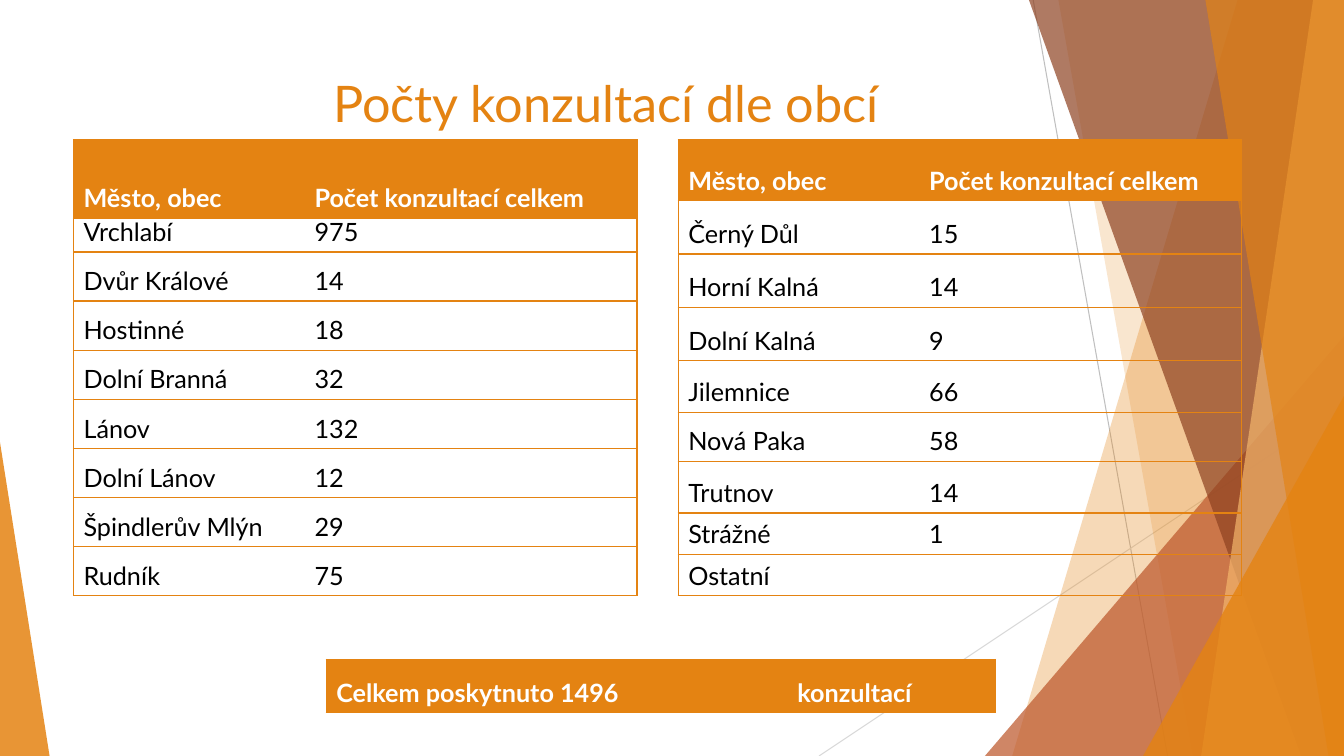
import pptx
import pptx.dml.color
import pptx.enum.shapes
import pptx.enum.text
import pptx.oxml
import pptx.oxml.ns
import pptx.util

Pt = pptx.util.Pt
ORANGE, WHITE, BLACK = "E48312", "FFFFFF", "000000"
WIDTH, HEIGHT = 960, 540

TITLE = "Počty konzultací dle obcí"
HEADINGS = ("Město, obec", "Počet konzultací celkem")
LEFT_TOWNS = [
    HEADINGS, ("Vrchlabí", "975"), ("Dvůr Králové", "14"), ("Hostinné", "18"),
    ("Dolní Branná", "32"), ("Lánov", "132"), ("Dolní Lánov", "12"),
    ("Špindlerův Mlýn", "29"), ("Rudník", "75"),
]
RIGHT_TOWNS = [
    HEADINGS, ("Černý Důl", "15"), ("Horní Kalná", "14"), ("Dolní Kalná", "9"),
    ("Jilemnice", "66"), ("Nová Paka", "58"), ("Trutnov", "14"),
    ("Strážné", "1"), ("Ostatní", ""),
]
TOTAL = [("Celkem poskytnuto 1496", " konzultací")]

# rows, left, top, column widths, row heights
TABLES = [
    (LEFT_TOWNS, 52.5, 100, (165, 237.5), [56, 24] + [35.1] * 7),
    (RIGHT_TOWNS, 484.5, 100, (172, 230.5), [43.5, 38, 38, 38, 37, 35, 37, 29.5, 29.5]),
    (TOTAL, 233, 471, (325, 153), [38]),
]

RAYS = [(738, 0, 834, 540, "BFBFBF"), (960, 290, 585, 540, "D9D9D9")]
# Sheets run to the right edge: (top x, bottom x), colour, opacity.
# Corners are right triangles: (left, top, width, apex), colour, opacity.
FACETS = [
    ((884, 723), ORANGE, 30),
    ((756, 852), ORANGE, 20),
    ((703.5, 240, 256.5, 1), "BD582C", 72),
    ((735, 929.5), "8E4221", 70),
    ((938, 858), "F3B56C", 70),
    ((861, 949), ORANGE, 65),
    ((816.5, 283, 143.5, 1), ORANGE, 80),
    ((0, 316, 35.4, 0), ORANGE, 85),
]


def rgb(colour):
    return pptx.dml.color.RGBColor.from_string(colour)


def write(frame, text, size=18, colour=BLACK, bold=False, align=None, spacing=None):
    paragraph = frame.paragraphs[0]
    paragraph.alignment = align
    paragraph.line_spacing = spacing
    if text:
        paragraph.add_run().text = text
    for font in [paragraph.font] + [run.font for run in paragraph.runs]:
        font.name, font.size, font.bold = "Lato", Pt(size), bold
        font.color.rgb = rgb(colour)


def add_ray(x1, y1, x2, y2, colour):
    ray = slide.shapes.add_connector(
        pptx.enum.shapes.MSO_CONNECTOR.STRAIGHT, Pt(x1), Pt(y1), Pt(x2), Pt(y2))
    ray.line.color.rgb = rgb(colour)
    ray.line.width = Pt(0.75)
    pptx.oxml.ns.qn("a:effectLst")
    ray._element.spPr.append(
        pptx.oxml.parse_xml(f"<a:effectLst {pptx.oxml.ns.nsdecls('a')}/>"))


def add_facet(geometry, colour, opacity):
    if len(geometry) == 2:
        top_x, bottom_x = geometry
        builder = slide.shapes.build_freeform(Pt(top_x), 0)
        builder.add_line_segments(
            [(Pt(WIDTH), 0), (Pt(WIDTH), Pt(HEIGHT)), (Pt(bottom_x), Pt(HEIGHT))])
        facet = builder.convert_to_shape()
    else:
        left, top, width, apex = geometry
        facet = slide.shapes.add_shape(
            pptx.enum.shapes.MSO_SHAPE.ISOSCELES_TRIANGLE,
            Pt(left), Pt(top), Pt(width), Pt(HEIGHT - top))
        facet.adjustments[0] = apex
    facet.shadow.inherit = False
    facet.line.fill.background()
    facet.fill.solid()
    facet.fill.fore_color.rgb = rgb(colour)
    tint = facet._element.spPr.find(".//" + pptx.oxml.ns.qn("a:srgbClr"))
    tint.append(pptx.oxml.parse_xml(
        f'<a:alpha {pptx.oxml.ns.nsdecls("a")} val="{opacity * 1000}"/>'))


def set_borders(cell, drawn):
    for side in "LRTB":
        paint = (f'<a:solidFill><a:srgbClr val="{ORANGE}"/></a:solidFill>'
                 if side in drawn else "<a:noFill/>")
        cell._tc.get_or_add_tcPr().append(pptx.oxml.parse_xml(
            f'<a:ln{side} {pptx.oxml.ns.nsdecls("a")} w="{Pt(1)}">{paint}</a:ln{side}>'))


def add_count_table(rows, left, top, widths, heights):
    table = slide.shapes.add_table(
        len(rows), len(widths), Pt(left), Pt(top),
        Pt(sum(widths)), Pt(sum(heights))).table
    for column, width in zip(table.columns, widths):
        column.width = Pt(width)
    for r, (row, height) in enumerate(zip(rows, heights)):
        table.rows[r].height = Pt(height)
        for c, text in enumerate(row):
            cell = table.cell(r, c)
            heading = r == 0
            cell.vertical_anchor = pptx.enum.text.MSO_ANCHOR.BOTTOM
            set_borders(cell, "TBL" if c == 0 else "TBR")
            if heading:
                cell.fill.solid()
                cell.fill.fore_color.rgb = rgb(ORANGE)
            else:
                cell.fill.background()
            write(cell.text_frame, text, colour=WHITE if heading else BLACK,
                  bold=heading, spacing=Pt(10))


deck = pptx.Presentation()
deck.slide_width, deck.slide_height = Pt(WIDTH), Pt(HEIGHT)
slide = deck.slides.add_slide(deck.slide_layouts[6])

for ray in RAYS:
    add_ray(*ray)
for facet in FACETS:
    add_facet(*facet)

title = slide.shapes.add_textbox(Pt(86.5), Pt(48), Pt(693), Pt(104)).text_frame
title.word_wrap = True
write(title, TITLE, size=36, colour=ORANGE, align=pptx.enum.text.PP_ALIGN.CENTER)

for table in TABLES:
    add_count_table(*table)

deck.save("out.pptx")
